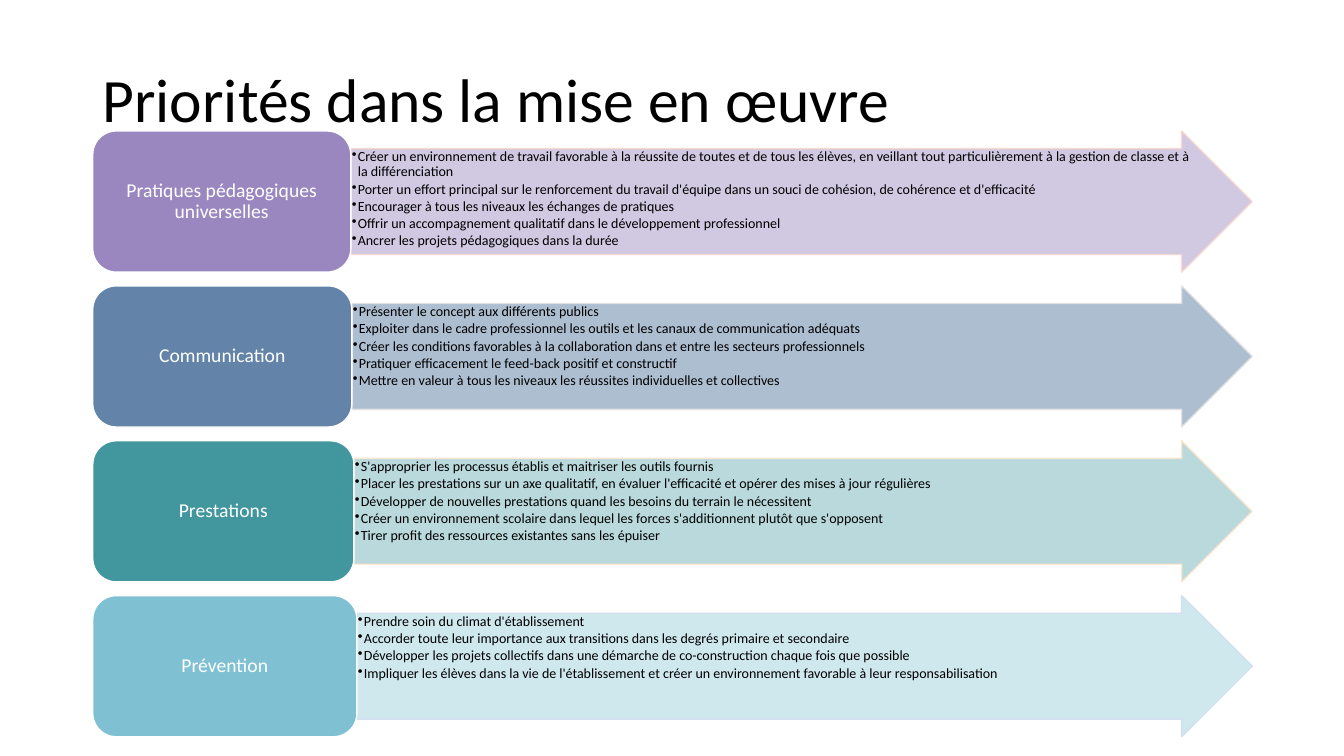
"""Build the slide of four priorities, each a label and an arrow of actions."""
from dataclasses import dataclass
from typing import Any

from lxml.etree import SubElement
from pptx import Presentation
from pptx.dml.color import RGBColor
from pptx.enum.shapes import MSO_SHAPE as Shape
from pptx.enum.text import MSO_ANCHOR as Anchor, PP_ALIGN as Align
from pptx.oxml.ns import qn
from pptx.util import Inches, Pt

BLACK = RGBColor(0x00, 0x00, 0x00)
WHITE = RGBColor(0xFF, 0xFF, 0xFF)
PURPLE = RGBColor(0x9A, 0x87, 0xC0)
BLUE = RGBColor(0x63, 0x83, 0xA8)
TEAL = RGBColor(0x42, 0x97, 0x9F)
SKY = RGBColor(0x7F, 0xC1, 0xD3)
PINK_EDGE = RGBColor(0xF8, 0xD7, 0xCE)
GREY_EDGE = RGBColor(0xE1, 0xE1, 0xE1)
CREAM_EDGE = RGBColor(0xFF, 0xE8, 0xCC)
PALE_EDGE = RGBColor(0xD2, 0xDE, 0xEF)

LEFT, RIGHT = 0.92, 12.42
FIRST_TOP, LAST_TOP = 1.3, 5.91
ROW_HEIGHT = 1.4
EDGE_OPACITY = 90
BULLET_INDENT = Inches(0.06)

TITLE_FORMAT = {"size": Pt(44), "name": "Calibri"}
LABEL_FORMAT = {"size": Pt(14), "name": "Calibri"}
ACTION_FORMAT = {"size": Pt(10), "name": "Calibri"}
TITLE_PARAGRAPH = {"line_spacing": 0.9}
LABEL_PARAGRAPH = {"line_spacing": 0.9, "alignment": Align.CENTER}
ACTION_PARAGRAPH = {"line_spacing": 0.9, "space_after": Pt(1.5),
                    "alignment": Align.LEFT, "level": 1}


@dataclass(frozen=True)
class Priority:
    label: str
    label_width: float
    color: RGBColor
    opacity: int
    edge: RGBColor
    actions: tuple[str, ...]


PRIORITIES = (
    Priority("Pratiques pédagogiques universelles", 2.56, PURPLE, 45, PINK_EDGE, (
        "Créer un environnement de travail favorable à la réussite de toutes et de tous les élèves, "
        "en veillant tout particulièrement à la gestion de classe et à la différenciation",
        "Porter un effort principal sur le renforcement du travail d'équipe "
        "dans un souci de cohésion, de cohérence et d'efficacité",
        "Encourager à tous les niveaux les échanges de pratiques",
        "Offrir un accompagnement qualitatif dans le développement professionnel",
        "Ancrer les projets pédagogiques dans la durée",
    )),
    Priority("Communication", 2.57, BLUE, 52, GREY_EDGE, (
        "Présenter le concept aux différents publics",
        "Exploiter dans le cadre professionnel les outils et les canaux de communication adéquats",
        "Créer les conditions favorables à la collaboration dans et entre les secteurs professionnels",
        "Pratiquer efficacement le feed-back positif et constructif",
        "Mettre en valeur à tous les niveaux les réussites individuelles et collectives",
    )),
    Priority("Prestations", 2.59, TEAL, 36, CREAM_EDGE, (
        "S'approprier les processus établis et maitriser les outils fournis",
        "Placer les prestations sur un axe qualitatif, en évaluer l'efficacité "
        "et opérer des mises à jour régulières",
        "Développer de nouvelles prestations quand les besoins du terrain le nécessitent",
        "Créer un environnement scolaire dans lequel les forces s'additionnent plutôt que s'opposent",
        "Tirer profit des ressources existantes sans les épuiser",
    )),
    Priority("Prévention", 2.62, SKY, 37, PALE_EDGE, (
        "Prendre soin du climat d'établissement",
        "Accorder toute leur importance aux transitions dans les degrés primaire et secondaire",
        "Développer les projets collectifs dans une démarche de co-construction "
        "chaque fois que possible",
        "Impliquer les élèves dans la vie de l'établissement et créer un environnement favorable "
        "à leur responsabilisation",
    )),
)


def apply(target: Any, values: dict[str, Any]) -> None:
    """Set every attribute named in values."""
    for name, value in values.items():
        setattr(target, name, value)


def set_frame(shape: Any, anchor: Any, side: float, end: float) -> None:
    """Set wrapping, anchor and margins of a shape's text."""
    apply(shape.text_frame, {
        "word_wrap": True, "vertical_anchor": anchor,
        "margin_left": Inches(side), "margin_right": Inches(side),
        "margin_top": Inches(end), "margin_bottom": Inches(end),
    })


def write(paragraph: Any, text: str, layout: dict[str, Any],
          font: dict[str, Any], color: RGBColor) -> None:
    """Write one formatted paragraph."""
    apply(paragraph, layout)
    run = paragraph.add_run()
    run.text = text
    apply(run.font, font)
    run.font.color.rgb = color


def add_bullet(paragraph: Any) -> None:
    """Give a paragraph a hanging bullet."""
    properties = paragraph._p.get_or_add_pPr()
    properties.set("marL", str(BULLET_INDENT))
    properties.set("indent", str(-BULLET_INDENT))
    SubElement(properties, qn("a:buChar")).set("char", "•")


def add_block(slide: Any, kind: Any, left: float, top: float, width: float,
              fill: RGBColor, edge: RGBColor) -> Any:
    """Add a filled shape one row high."""
    shape = slide.shapes.add_shape(
        kind, Inches(left), Inches(top), Inches(width), Inches(ROW_HEIGHT))
    shape.shadow.inherit = False
    shape.fill.solid()
    shape.fill.fore_color.rgb = fill
    shape.line.color.rgb = edge
    shape.line.width = Pt(1)
    return shape


def add_title(slide: Any) -> None:
    """Add the slide's heading."""
    box = slide.shapes.add_textbox(Inches(LEFT), Inches(0.74), Inches(RIGHT - LEFT), Inches(0.55))
    set_frame(box, Anchor.MIDDLE, 0.1, 0.05)
    write(box.text_frame.paragraphs[0], "Priorités dans la mise en œuvre",
          TITLE_PARAGRAPH, TITLE_FORMAT, BLACK)


def add_priority(slide: Any, priority: Priority, top: float) -> None:
    """Add an arrow of actions and its label."""
    arrow_left = LEFT + priority.label_width
    arrow = add_block(slide, Shape.RIGHT_ARROW, arrow_left, top, RIGHT - arrow_left,
                      priority.color, priority.edge)
    arrow.adjustments[0] = 0.75
    arrow.adjustments[1] = 0.5
    colors = arrow._element.spPr.iter(qn("a:srgbClr"))
    for color, opacity in zip(colors, (priority.opacity, EDGE_OPACITY)):
        SubElement(color, qn("a:alpha")).set("val", str(opacity * 1000))
    set_frame(arrow, Anchor.TOP, 0.01, 0.01)
    frame = arrow.text_frame
    for index, action in enumerate(priority.actions):
        paragraph = frame.add_paragraph() if index else frame.paragraphs[0]
        write(paragraph, action, ACTION_PARAGRAPH, ACTION_FORMAT, BLACK)
        add_bullet(paragraph)

    label = add_block(slide, Shape.ROUNDED_RECTANGLE, LEFT, top, priority.label_width,
                      priority.color, WHITE)
    set_frame(label, Anchor.MIDDLE, 0.06, 0.03)
    write(label.text_frame.paragraphs[0], priority.label, LABEL_PARAGRAPH, LABEL_FORMAT, WHITE)


def main() -> None:
    """Build and save the presentation."""
    presentation = Presentation()
    presentation.slide_width = Inches(13.33)
    presentation.slide_height = Inches(7.5)
    slide = presentation.slides.add_slide(presentation.slide_layouts[6])
    add_title(slide)
    pitch = (LAST_TOP - FIRST_TOP) / (len(PRIORITIES) - 1)
    for row, priority in enumerate(PRIORITIES):
        add_priority(slide, priority, FIRST_TOP + row * pitch)
    presentation.save("out.pptx")


if __name__ == "__main__":
    main()
